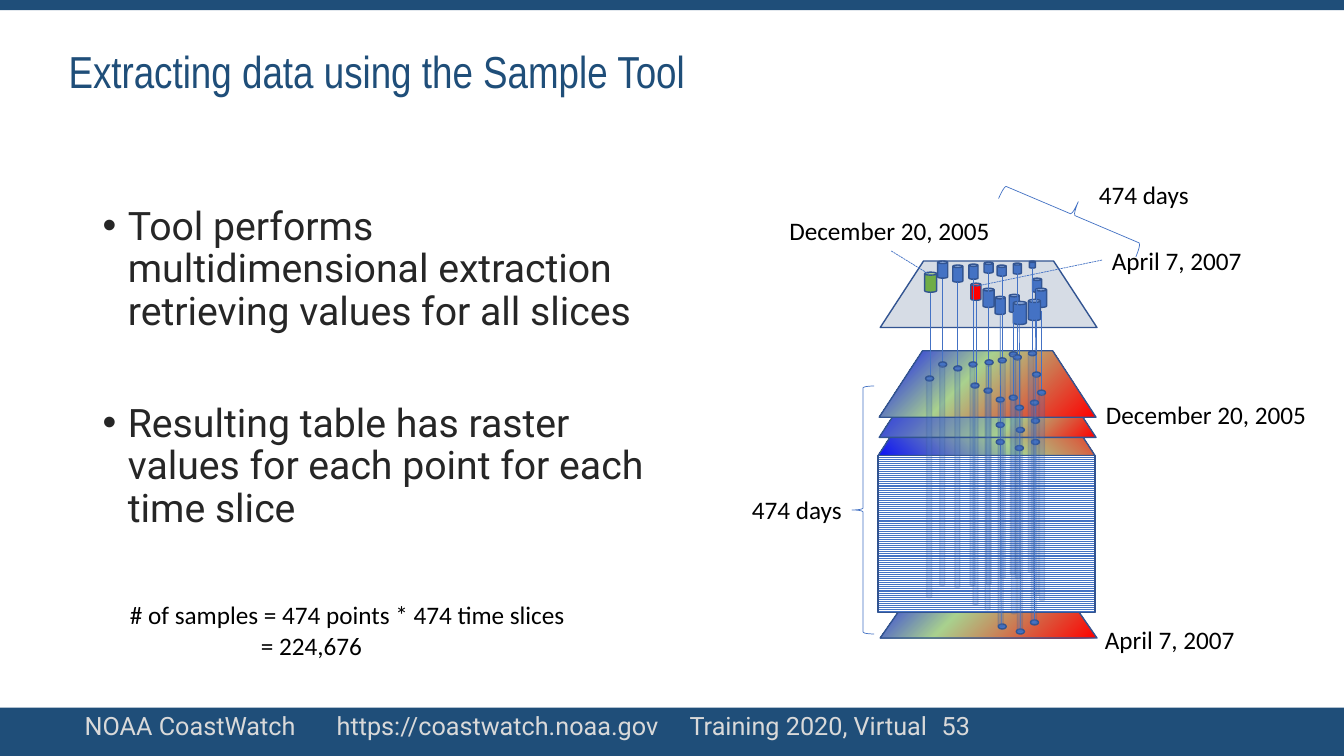
from dataclasses import dataclass
from typing import NamedTuple, Optional

from lxml import etree
from pptx import Presentation
from pptx.dml.color import RGBColor
from pptx.enum.dml import MSO_LINE, MSO_PATTERN
from pptx.enum.shapes import MSO_CONNECTOR, MSO_SHAPE
from pptx.enum.text import MSO_ANCHOR, MSO_AUTO_SIZE, PP_ALIGN
from pptx.oxml.ns import qn
from pptx.util import Emu, Pt

RECTANGLE, CAN, DOT = MSO_SHAPE.RECTANGLE, MSO_SHAPE.CAN, MSO_SHAPE.OVAL
SHEET = MSO_SHAPE.FLOWCHART_MANUAL_OPERATION
LEFT_BRACE, RIGHT_BRACE = MSO_SHAPE.LEFT_BRACE, MSO_SHAPE.RIGHT_BRACE
DASHED, STRIPES = MSO_LINE.SQUARE_DOT, MSO_PATTERN.LIGHT_HORIZONTAL
STRAIGHT = MSO_CONNECTOR.STRAIGHT
TOP, MIDDLE, LEFT = MSO_ANCHOR.TOP, MSO_ANCHOR.MIDDLE, PP_ALIGN.LEFT
FIXED = MSO_AUTO_SIZE.NONE
TITLE_ONLY = 5
PX = 9144  # EMU in one px, 100 px to the inch


@dataclass(frozen=True)
class Theme:
    navy: str = "1F4E79"
    blue: str = "4472C4"
    outline: str = "325491"
    green: str = "70AD47"
    red: str = "FF0000"
    gray: str = "D6DCE5"
    white: str = "FFFFFF"
    black: str = "000000"
    body_text: str = "262626"
    footer_text: str = "D9D9D9"
    ramp_low: str = "0C12F6"
    ramp_middle: str = "A9D18E"
    title_font: str = "Arial Narrow"
    body_font: str = "Roboto"
    label_font: str = "Calibri"
    title_size: int = 32
    body_size: int = 28
    label_size: int = 18


THEME = Theme()


class Box(NamedTuple):
    left: int
    top: int
    width: int
    height: int


class Raster(NamedTuple):
    box: Box
    middle_stop: int
    focus_top: int


class Label(NamedTuple):
    text: str
    box: Box


class Cylinder(NamedTuple):
    box: Box
    color: str = THEME.blue


RASTERS = [Raster(Box(873, 571, 215, 62), 41, 0), Raster(Box(871, 386, 215, 66), 50, 100),
           Raster(Box(872, 368, 215, 66), 65, 0), Raster(Box(872, 348, 215, 66), 41, 0)]

CYLINDERS = [
    Cylinder(Box(930, 259, 10, 17)), Cylinder(Box(917, 270, 12, 20), THEME.green),
    Cylinder(Box(945, 263, 10, 17)), Cylinder(Box(961, 262, 9, 15)),
    Cylinder(Box(976, 260, 9, 11)), Cylinder(Box(989, 263, 9, 11)),
    Cylinder(Box(1005, 261, 8, 11)), Cylinder(Box(1024, 276, 9, 14)),
    Cylinder(Box(1021, 259, 6, 7)), Cylinder(Box(1027, 286, 11, 19)),
    Cylinder(Box(1020, 297, 12, 21)), Cylinder(Box(1001, 292, 10, 18)),
    Cylinder(Box(987, 294, 10, 18)), Cylinder(Box(975, 286, 11, 19)),
    Cylinder(Box(963, 281, 10, 17), THEME.red), Cylinder(Box(1005, 299, 13, 23))]

# Stems: short ones share a length; long ones are left, top, end left, end top
STEM_LENGTH = 84
SHORT_STEMS = [(923, 291), (935, 277), (950, 280), (965, 277), (968, 299), (980, 305),
               (1005, 310), (1033, 309), (1028, 287), (980, 270), (994, 273),
               (1009, 271), (1024, 266)]
LONG_STEMS = [(992, 313, 993, 621), (1011, 322, 1012, 624), (1027, 318, 1026, 615)]
LEADERS = [(884, 249, 923, 273), (1093, 258, 968, 284)]

# Sample points: left, top
DOTS = [(988, 419), (988, 436), (1007, 442), (1008, 424), (1023, 415), (1023, 436),
        (1022, 397), (1007, 402), (990, 619), (1008, 624), (1022, 615), (946, 363),
        (918, 373), (988, 394), (963, 380), (976, 385), (1001, 392), (1029, 387),
        (961, 359), (990, 355), (1001, 349), (931, 359), (977, 357), (1020, 348),
        (1024, 369), (1005, 352)]

# Translucent columns: left, top, height
COLUMNS = [(1023, 399, 220), (1009, 407, 219), (990, 399, 222), (977, 387, 218),
           (1003, 395, 214), (1031, 391, 205), (919, 375, 218), (932, 363, 218),
           (947, 365, 218), (965, 382, 218), (962, 363, 218), (978, 362, 218),
           (992, 356, 218), (1002, 352, 218), (1007, 356, 218), (1025, 373, 218),
           (1020, 350, 218)]

LABELS = [Label("474 days", Box(736, 486, 110, 40)), Label("474 days", Box(1080, 173, 110, 40)),
          Label("December 20, 2005", Box(1087, 391, 221, 40)),
          Label("April 7, 2007", Box(1086, 614, 150, 40)),
          Label("December 20, 2005", Box(773, 209, 221, 40)),
          Label("April 7, 2007", Box(1093, 238, 150, 40))]


def px(length: int) -> Emu:
    return Emu(length * PX)


def place(shape, box: Box) -> None:
    shape.left, shape.top, shape.width, shape.height = map(px, box)


def write(frame, text: str, *, font: str, size: int, color: str, first: bool = True,
          spacing: float = 1.0, before: int = 0, indent: int = 0,
          bullet: bool = False, tabs: tuple[int, ...] = ()) -> None:
    """Write one paragraph into a text frame."""
    paragraph = frame.paragraphs[0] if first else frame.add_paragraph()
    paragraph.alignment = LEFT
    paragraph.line_spacing = spacing
    paragraph.space_before = Pt(before)
    properties = paragraph._p.get_or_add_pPr()
    properties.set("marL", str(px(indent)))
    properties.set("indent", str(px(-indent if bullet else 0)))
    if bullet:
        etree.SubElement(properties, qn("a:buFont"), typeface="Arial")
        etree.SubElement(properties, qn("a:buChar"), char="•")
    if tabs:
        tab_list = etree.SubElement(properties, qn("a:tabLst"))
        for position in tabs:
            etree.SubElement(tab_list, qn("a:tab"), pos=str(px(position)), algn="l")
    run = paragraph.add_run()
    run.text = text
    run.font.name, run.font.size = font, Pt(size)
    run.font.color.rgb = RGBColor.from_string(color)


def set_alpha(fill, percent: int) -> None:
    color = fill._xPr.find(qn("a:solidFill"))[0]
    etree.SubElement(color, qn("a:alpha"), val=str(percent * 1000))


def add_figure(slide, preset, box: Box, fill: Optional[str] = None,
               line: Optional[str] = THEME.outline, weight: float = 1):
    shape = slide.shapes.add_shape(preset, *map(px, box))
    shape.shadow.inherit = False
    if fill:
        shape.fill.solid()
        shape.fill.fore_color.rgb = RGBColor.from_string(fill)
    else:
        shape.fill.background()
    if line:
        shape.line.color.rgb = RGBColor.from_string(line)
        shape.line.width = Pt(weight)
    else:
        shape.line.fill.background()
    return shape


def add_sheet(slide, box: Box):
    sheet = add_figure(slide, SHEET, box, THEME.gray)
    sheet._element.spPr.find(qn("a:xfrm")).set("flipV", "1")
    return sheet


def add_raster(slide, raster: Raster) -> None:
    properties = add_sheet(slide, raster.box)._element.spPr
    gradient = etree.Element(qn("a:gradFill"), rotWithShape="1")
    stops = etree.SubElement(gradient, qn("a:gsLst"))
    for position, color in ((0, THEME.ramp_low), (raster.middle_stop, THEME.ramp_middle),
                            (100, THEME.red)):
        stop = etree.SubElement(stops, qn("a:gs"), pos=str(position * 1000))
        etree.SubElement(stop, qn("a:srgbClr"), val=color)
    radial = etree.SubElement(gradient, qn("a:path"))
    radial.set("path", "circle")
    etree.SubElement(radial, qn("a:fillToRect"), l="0", t=str(raster.focus_top * 1000),
                     r="100000", b=str((100 - raster.focus_top) * 1000))
    properties.replace(properties.find(qn("a:solidFill")), gradient)


def add_line(slide, ends: tuple[int, int, int, int], dashed: bool = False) -> None:
    connector = slide.shapes.add_connector(STRAIGHT, *map(px, ends))
    connector.line.color.rgb = RGBColor.from_string(THEME.blue)
    connector.line.width = Pt(0.5)
    if dashed:
        connector.line.dash_style = DASHED
    etree.SubElement(connector._element.spPr, qn("a:effectLst"))


def add_text_frame(slide, box: Box, wrap: bool = False):
    frame = slide.shapes.add_textbox(*map(px, box)).text_frame
    frame.word_wrap = wrap
    return frame


def add_texts(slide) -> None:
    # Bands, footer and title
    footer = add_figure(slide, RECTANGLE, Box(0, 702, 1333, 49), THEME.navy, None).text_frame
    footer.vertical_anchor, footer.margin_left = TOP, px(84)
    write(footer, "NOAA CoastWatch\thttps://coastwatch.noaa.gov\tTraining 2020, Virtual\t53",
          font=THEME.body_font, size=THEME.label_size, color=THEME.footer_text,
          spacing=0.93, tabs=(357, 794, 1134))
    add_figure(slide, RECTANGLE, Box(0, 0, 1333, 10), THEME.navy, None)
    title = slide.shapes.title
    place(title, Box(58, 1, 1150, 145))
    title.text_frame.vertical_anchor, title.text_frame.auto_size = MIDDLE, FIXED
    write(title.text_frame, "Extracting data using the Sample Tool", font=THEME.title_font,
          size=THEME.title_size, color=THEME.navy, spacing=0.9)
    # Bullets and sample count
    body = add_text_frame(slide, Box(92, 200, 567, 476), wrap=True)
    for text, before in (
            ("Tool performs multidimensional extraction retrieving values for all slices", 0),
            ("Resulting table has raster values for each point for each time slice", 50)):
        write(body, text, font=THEME.body_font, size=THEME.body_size, color=THEME.body_text,
              first=before == 0, spacing=0.9, before=before, indent=25, bullet=True)
    count = add_text_frame(slide, Box(119, 590, 457, 71))
    for text, indent in (("# of samples = 474 points * 474 time slices", 0), ("= 224,676", 130)):
        write(count, text, font=THEME.label_font, size=THEME.label_size, color=THEME.black,
              first=indent == 0, indent=indent)


def add_diagram(slide) -> None:
    # Raster stack
    for raster in RASTERS:
        add_raster(slide, raster)
    stack = add_figure(slide, RECTANGLE, Box(871, 452, 215, 156))
    stack.fill.patterned()
    stack.fill.pattern = STRIPES
    stack.fill.fore_color.rgb = RGBColor.from_string(THEME.blue)
    stack.fill.back_color.rgb = RGBColor.from_string(THEME.white)
    # Sampling plane with cylinders and stems
    add_sheet(slide, Box(873, 259, 215, 66))
    for cylinder in CYLINDERS:
        add_figure(slide, CAN, cylinder.box, cylinder.color)
    for left, top in SHORT_STEMS:
        add_line(slide, (left, top, left, top + STEM_LENGTH))
    for ends in LONG_STEMS:
        add_line(slide, ends)
    # Labels, leaders and braces
    for label in LABELS:
        write(add_text_frame(slide, label.box), label.text, font=THEME.label_font,
              size=THEME.label_size, color=THEME.black)
    for ends in LEADERS:
        add_line(slide, ends, dashed=True)
    add_figure(slide, LEFT_BRACE, Box(845, 383, 22, 246), line=THEME.blue, weight=0.5)
    brace = add_figure(slide, RIGHT_BRACE, Box(1050, 139, 28, 148), line=THEME.blue, weight=0.5)
    brace.rotation = 293
    # Sample points and columns through the stack
    for left, top in DOTS:
        add_figure(slide, DOT, Box(left, top, 8, 5), THEME.blue)
    for left, top, height in COLUMNS:
        column = add_figure(slide, CAN, Box(left, top, 5, height), THEME.blue)
        set_alpha(column.fill, 25)
        set_alpha(column.line.fill, 18)


def main() -> None:
    presentation = Presentation()
    presentation.slide_width, presentation.slide_height = px(1333), px(750)
    slide = presentation.slides.add_slide(presentation.slide_layouts[TITLE_ONLY])
    add_texts(slide)
    add_diagram(slide)
    presentation.save("out.pptx")


if __name__ == "__main__":
    main()
